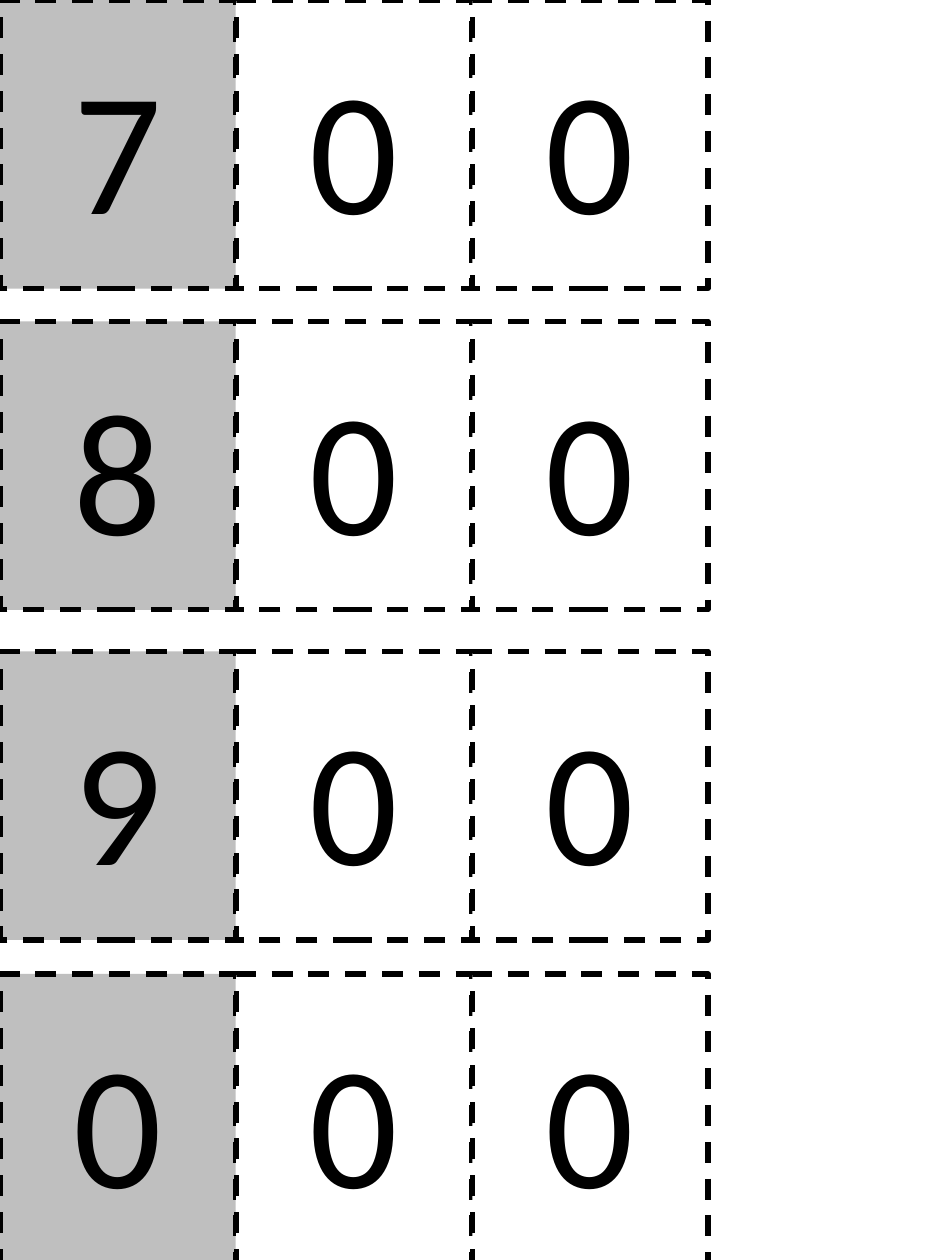
from dataclasses import dataclass

from pptx import Presentation
from pptx.dml.color import RGBColor
from pptx.enum.dml import MSO_LINE
from pptx.enum.shapes import MSO_SHAPE
from pptx.enum.text import MSO_ANCHOR, PP_ALIGN
from pptx.util import Inches, Pt

RECT = MSO_SHAPE.RECTANGLE
DASH = MSO_LINE.DASH
MIDDLE = MSO_ANCHOR.MIDDLE
CENTER = PP_ALIGN.CENTER
BLANK_LAYOUT = 6


@dataclass(frozen=True)
class Theme:
    font: str = "Calibri"
    digit_size: int = 100
    line_width: int = 3
    ink: RGBColor = RGBColor(0x00, 0x00, 0x00)
    lead_fill: RGBColor = RGBColor(0xBF, 0xBF, 0xBF)
    card_fill: RGBColor = RGBColor(0xFF, 0xFF, 0xFF)


THEME = Theme()
CARD_W, CARD_H = 1.87, 2.29
COLUMN_STEP = 1.875
STRIPS = [("700", 0), ("800", 2.55), ("900", 5.17), ("000", 7.73)]  # digits, top


def set_text(tf, text, *, size, color, font=THEME.font, align=CENTER, anchor=MIDDLE):
    tf.word_wrap = True
    tf.vertical_anchor = anchor
    p = tf.paragraphs[0]
    p.alignment = align
    r = p.add_run()
    r.text = text
    r.font.name = font
    r.font.size = Pt(size)
    r.font.color.rgb = color


def add_card(s, digit, left, top, width, height, fill):
    sp = s.shapes.add_shape(RECT, Inches(left), Inches(top), Inches(width), Inches(height))
    sp.shadow.inherit = False
    sp.fill.solid()
    sp.fill.fore_color.rgb = fill
    sp.line.color.rgb = THEME.ink
    sp.line.width = Pt(THEME.line_width)
    sp.line.dash_style = DASH
    set_text(sp.text_frame, digit, size=THEME.digit_size, color=THEME.ink)


def add_strip(s, digits, left, top):
    """Place one row of digit cards, the leading one shaded."""
    for i, digit in enumerate(digits):
        fill = THEME.card_fill if i else THEME.lead_fill
        add_card(s, digit, left + i * COLUMN_STEP, top, CARD_W, CARD_H, fill)


def main():
    prs = Presentation()
    prs.slide_width, prs.slide_height = Inches(7.5), Inches(10)
    s = prs.slides.add_slide(prs.slide_layouts[BLANK_LAYOUT])
    for digits, top in STRIPS:
        add_strip(s, digits, 0, top)
    prs.save("out.pptx")


if __name__ == "__main__":
    main()
